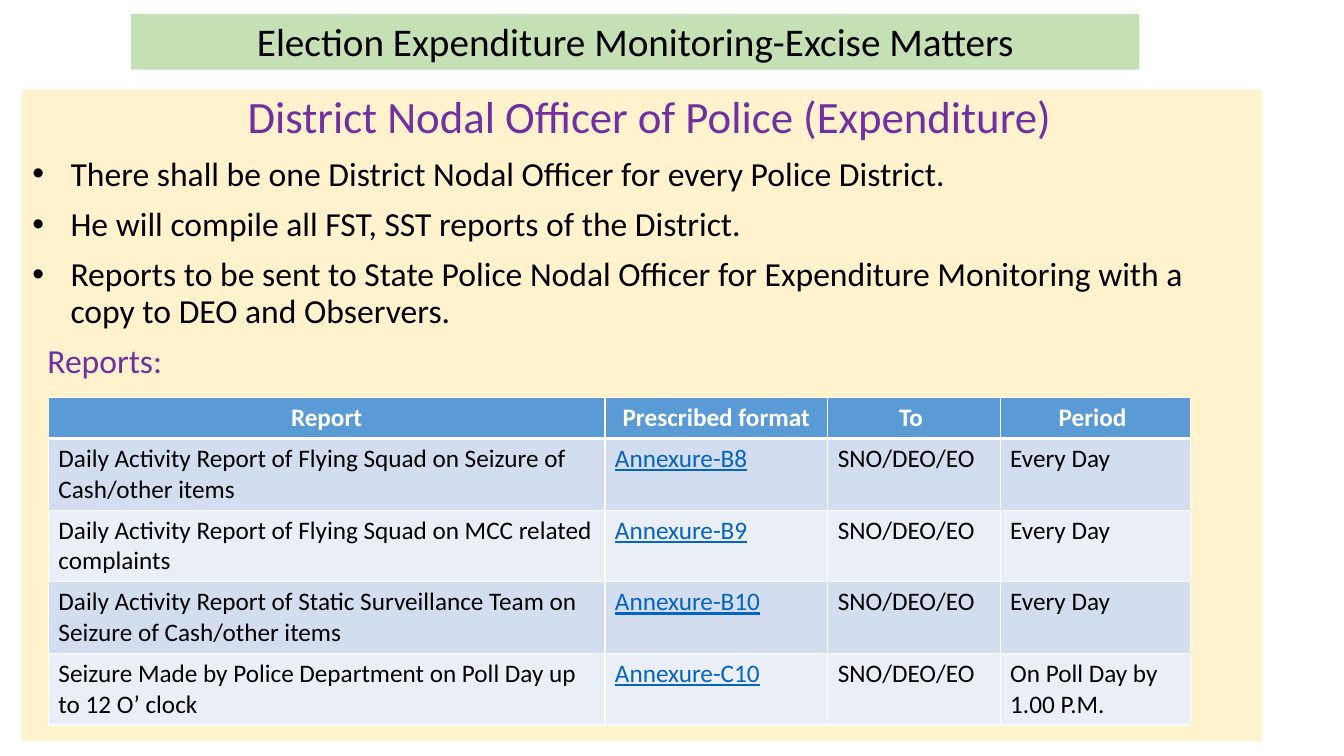
from lxml import etree
from pptx import Presentation
from pptx.dml.color import RGBColor
from pptx.enum.text import MSO_ANCHOR, MSO_AUTO_SIZE, PP_ALIGN
from pptx.oxml.ns import qn
from pptx.util import Inches, Pt

LEFT, CENTER = PP_ALIGN.LEFT, PP_ALIGN.CENTER
TOP, BOTTOM = MSO_ANCHOR.TOP, MSO_ANCHOR.BOTTOM
NO_AUTOFIT = MSO_AUTO_SIZE.NONE

FONT = "Calibri"
BLACK, WHITE, PURPLE, LINK_BLUE = "000000", "FFFFFF", "7030A0", "0563C1"
TITLE_GREEN, PANEL_YELLOW, HEADER_BLUE = "C5E0B4", "FFF2CC", "5B9BD5"
BAND_FILLS = ("D2DEEF", "EAEFF7")

TITLE = "Election Expenditure Monitoring-Excise Matters"
HEADING = "District Nodal Officer of Police (Expenditure)"
DUTIES = (
    "There shall be one District Nodal Officer for every Police District.",
    "He will compile all FST, SST reports of the District.",
    "Reports to be sent to State Police Nodal Officer for Expenditure Monitoring "
    "with a copy to DEO and Observers.",
)
COLUMN_WIDTHS = (5.52, 2.21, 1.71, 1.89)
HEADER_HEIGHT, ROW_HEIGHT = 0.41, 0.71
HEADERS = ("Report", "Prescribed format", "To ", "Period ")
RECIPIENTS = "SNO/DEO/EO"
REPORTS = (
    ("Daily Activity Report of Flying Squad on Seizure of Cash/other items",
     "Annexure-B8", RECIPIENTS, "Every Day"),
    ("Daily Activity Report of Flying Squad on MCC related complaints",
     "Annexure-B9", RECIPIENTS, "Every Day"),
    ("Daily Activity Report of Static Surveillance Team on Seizure of Cash/other items",
     "Annexure-B10", RECIPIENTS, "Every Day"),
    ("Seizure Made by Police Department on Poll Day up to 12 O’ clock",
     "Annexure-C10", RECIPIENTS, "On Poll Day by 1.00 P.M."),
)


def rgb(color):
    return RGBColor.from_string(color)


def apply_format(target, values):
    for name, value in values.items():
        setattr(target, name, value)


def write_paragraph(paragraph, text, size, color, paragraph_format, **font_format):
    apply_format(paragraph, paragraph_format)
    run = paragraph.add_run()
    run.text = text
    apply_format(run.font, {"name": FONT, "size": Pt(size), **font_format})
    run.font.color.rgb = rgb(color)


def set_indent(paragraph, margin, hanging=0, bullet=None):
    properties = paragraph._p.get_or_add_pPr()
    properties.set("marL", str(Inches(margin)))
    properties.set("indent", str(-Inches(hanging)))
    if bullet:
        etree.SubElement(properties, qn("a:buFont")).set("typeface", "Arial")
        etree.SubElement(properties, qn("a:buChar")).set("char", bullet)


def place_placeholder(shape, box, fill, anchor):
    """Move and fill a placeholder, and return its text frame."""
    left, top, width, height = map(Inches, box)
    apply_format(shape, {"left": left, "top": top, "width": width, "height": height})
    shape.fill.solid()
    shape.fill.fore_color.rgb = rgb(fill)
    apply_format(shape.text_frame, {
        "word_wrap": True, "auto_size": NO_AUTOFIT, "vertical_anchor": anchor})
    return shape.text_frame


def fill_title(shape, box):
    frame = place_placeholder(shape, box, TITLE_GREEN, BOTTOM)
    write_paragraph(frame.paragraphs[0], TITLE, 28, BLACK,
                    {"alignment": CENTER, "line_spacing": 0.9})


def fill_duties(shape, box):
    frame = place_placeholder(shape, box, PANEL_YELLOW, TOP)
    lines = [(HEADING, 32, PURPLE, CENTER, (0.15,))]
    lines += [(duty, 24, BLACK, LEFT, (0.38, 0.38, "•")) for duty in DUTIES]
    lines.append(("Reports:", 24, PURPLE, LEFT, (0.15,)))
    for index, (text, size, color, alignment, indent) in enumerate(lines):
        paragraph = frame.add_paragraph() if index else frame.paragraphs[0]
        write_paragraph(paragraph, text, size, color, {
            "alignment": alignment, "line_spacing": 0.9, "space_before": Pt(10)})
        set_indent(paragraph, *indent)


def set_borders(cell, bottom_width):
    properties = cell._tc.get_or_add_tcPr()
    for side, width in (("L", 1), ("R", 1), ("T", 1), ("B", bottom_width)):
        line = etree.SubElement(properties, qn(f"a:ln{side}"), w=str(Pt(width)))
        fill = etree.SubElement(line, qn("a:solidFill"))
        etree.SubElement(fill, qn("a:srgbClr"), val=WHITE)


def format_cell(cell, text, fill, color, alignment, bottom_width=1, **font_format):
    set_borders(cell, bottom_width)
    cell.fill.solid()
    cell.fill.fore_color.rgb = rgb(fill)
    write_paragraph(cell.text_frame.paragraphs[0], text, 18, color,
                    {"alignment": alignment}, **font_format)


def add_reports_table(slide, left, top):
    heights = [HEADER_HEIGHT] + [ROW_HEIGHT] * len(REPORTS)
    table = slide.shapes.add_table(
        len(heights), len(HEADERS), Inches(left), Inches(top),
        Inches(sum(COLUMN_WIDTHS)), Inches(sum(heights))).table
    for column, width in zip(table.columns, COLUMN_WIDTHS):
        column.width = Inches(width)
    for row, height in zip(table.rows, heights):
        row.height = Inches(height)
    for column, header in enumerate(HEADERS):
        format_cell(table.cell(0, column), header, HEADER_BLUE, WHITE, CENTER,
                    bottom_width=3, bold=True)
    for row, report in enumerate(REPORTS, 1):
        for column, text in enumerate(report):
            is_annexure = column == 1
            format_cell(table.cell(row, column), text, BAND_FILLS[(row - 1) % 2],
                        LINK_BLUE if is_annexure else BLACK, LEFT,
                        bold=False, underline=is_annexure)


def main():
    presentation = Presentation()
    presentation.slide_width = Inches(13.33)
    presentation.slide_height = Inches(7.5)
    slide = presentation.slides.add_slide(presentation.slide_layouts[0])
    fill_title(slide.shapes.title, (1.3, 0.14, 10, 0.55))
    fill_duties(slide.placeholders[1], (0.22, 0.89, 12.3, 6.46))
    add_reports_table(slide, 0.48, 3.94)
    presentation.save("out.pptx")


if __name__ == "__main__":
    main()
